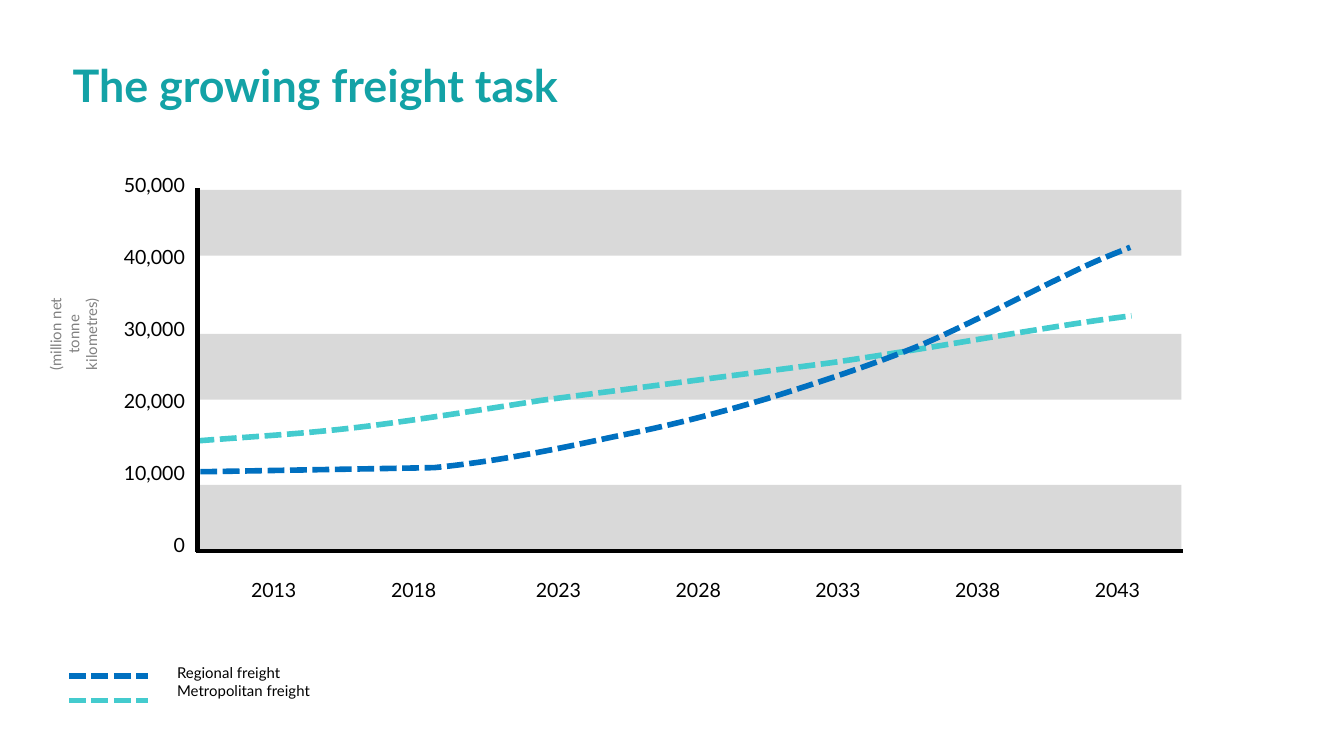
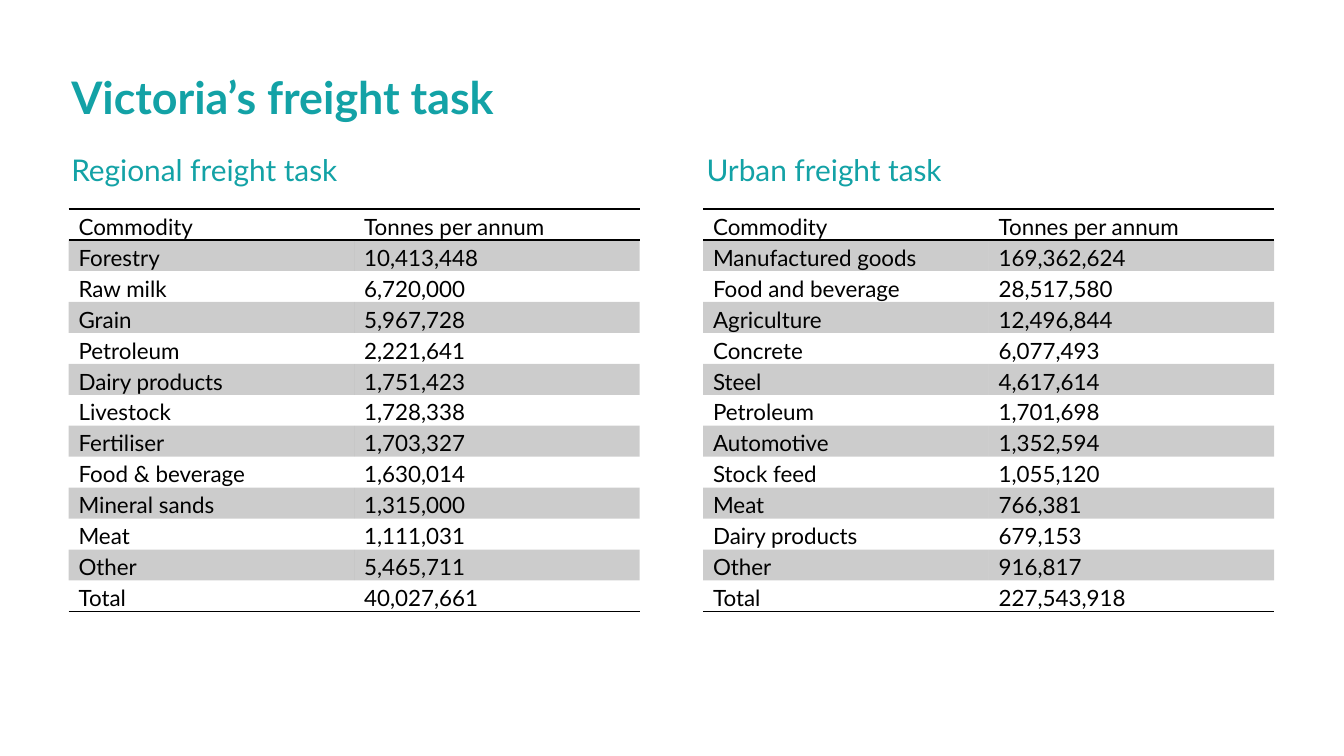
from dataclasses import dataclass

from lxml import etree
from pptx import Presentation
from pptx.dml.color import RGBColor
from pptx.enum import dml, shapes, text
from pptx.oxml import ns
from pptx import util as u


@dataclass(frozen=True)
class Theme:
    font: str = "Lato"
    teal: str = "13A2A6"
    aqua: str = "44CBCE"
    blue: str = "0070C0"
    black: str = "000000"
    grey: str = "808080"
    band: str = "D9D9D9"
    title_size: float = 24
    heading_size: float = 16
    table_size: float = 12
    axis_size: float = 10.5
    small_size: float = 8
    series_width: float = 3
    axis_width: float = 2.25
    table_style: str = "{2D5ABB26-0587-4C30-8999-92F81FD0307C}"


THEME = Theme()

REGIONAL_CURVE = [
    [(107.3, 252.7)],
    [(112.3, 252.7)],
    [(232.6, 250.6)],
    [(268.6, 247), (298.8, 240.5), (329, 234)],
    [(358.6, 228.2), (383, 221.8), (410.4, 213.8)],
    [(437.8, 205.2), (466.6, 195.8), (493.2, 185)],
    [(519.8, 173.5), (550.8, 157), (569.5, 148.3)],
    [(588.2, 139), (596.9, 136.1), (605.5, 132.5)],
]
METROPOLITAN_CURVE = [
    [(105.8, 236.2)],
    [(133.9, 234), (161.3, 232.6), (191.5, 229)],
    [(222.5, 225.4), (289.4, 214.6), (289.4, 214.6)],
    [(445, 194.4)],
    [(489.6, 187.9), (529.9, 180.7), (557.3, 176.4)],
    [(583.9, 172.1), (595.4, 170.6), (606.2, 169.2)],
]
YEAR_STOPS = (75, 152.6, 227.5, 302.3, 377.2, 452)
TABLE_HEADER = ("Commodity", "Tonnes per annum")
REGIONAL_ROWS = [
    ("Forestry", "10,413,448"),
    ("Raw milk", "6,720,000"),
    ("Grain", "5,967,728"),
    ("Petroleum", "2,221,641"),
    ("Dairy products", "1,751,423"),
    ("Livestock", "1,728,338"),
    ("Fertiliser", "1,703,327"),
    ("Food & beverage", "1,630,014"),
    ("Mineral sands", "1,315,000"),
    ("Meat", "1,111,031"),
    ("Other", "5,465,711"),
    ("Total", "40,027,661"),
]
URBAN_ROWS = [
    ("Manufactured goods", "169,362,624"),
    ("Food and beverage", "28,517,580"),
    ("Agriculture", "12,496,844"),
    ("Concrete", "6,077,493"),
    ("Steel", "4,617,614"),
    ("Petroleum", "1,701,698"),
    ("Automotive", "1,352,594"),
    ("Stock feed", "1,055,120"),
    ("Meat", "766,381"),
    ("Dairy products", "679,153"),
    ("Other", "916,817"),
    ("Total", "227,543,918"),
]


def points(*values):
    return [u.Pt(value) for value in values]


def set_formats(target, formats):
    for name, value in formats.items():
        setattr(target, name, value)


def write_text(frame, lines, size, color, bold=False, **paragraph_formats):
    frame.text = "\n".join(lines)
    for paragraph in frame.paragraphs:
        set_formats(paragraph, {"alignment": text.PP_ALIGN.LEFT,
                                "space_before": u.Pt(0), **paragraph_formats})
        for run in paragraph.runs:
            set_formats(run.font, {"name": THEME.font, "size": u.Pt(size), "bold": bold})
            run.font.color.rgb = RGBColor.from_string(color)


def fill_placeholder(placeholder, box, words, size, bold=False):
    set_formats(placeholder, dict(zip(("left", "top", "width", "height"), points(*box))))
    set_formats(placeholder.text_frame, {"vertical_anchor": text.MSO_ANCHOR.TOP,
                                         "word_wrap": True,
                                         "auto_size": text.MSO_AUTO_SIZE.SHAPE_TO_FIT_TEXT})
    write_text(placeholder.text_frame, [words], size, THEME.teal, bold)


def add_title(slide, box, words):
    fill_placeholder(slide.shapes.title, box, words, THEME.title_size, True)


def add_text(slide, box, lines, size, color=THEME.black, frame_formats=None, **paragraph_formats):
    shape = slide.shapes.add_textbox(*points(*box))
    set_formats(shape.text_frame, {"word_wrap": True,
                                   "auto_size": text.MSO_AUTO_SIZE.SHAPE_TO_FIT_TEXT,
                                   **(frame_formats or {})})
    write_text(shape.text_frame, lines, size, color, **paragraph_formats)
    return shape


def add_tab_stops(paragraph, stops):
    tab_list = etree.SubElement(paragraph._p.get_or_add_pPr(), ns.qn("a:tabLst"))
    for stop in stops:
        etree.SubElement(tab_list, ns.qn("a:tab"), pos=str(u.Pt(stop)), algn="l")


def add_band(slide, top):
    band = slide.shapes.add_shape(shapes.MSO_SHAPE.RECTANGLE, *points(106.6, top, 526.3, 35.3))
    band.shadow.inherit = False
    band.fill.solid()
    band.fill.fore_color.rgb = RGBColor.from_string(THEME.band)
    band.line.fill.background()


def style_line(line, color, width, dashed):
    line.color.rgb = RGBColor.from_string(color)
    line.width = u.Pt(width)
    if dashed:
        line.dash_style = dml.MSO_LINE.SQUARE_DOT


def add_line(slide, ends, color, width, dashed=False):
    line = slide.shapes.add_connector(shapes.MSO_CONNECTOR.STRAIGHT, *points(*ends))
    style_line(line.line, color, width, dashed)
    etree.SubElement(line._element.spPr, ns.qn("a:effectLst"))


def round_segments(curve, segments):
    straight_lines = iter(list(curve._element.iter(ns.qn("a:lnTo"))))
    for segment in segments:
        pieces = [next(straight_lines) for _ in segment]
        if len(pieces) == 3:
            bezier = etree.Element(ns.qn("a:cubicBezTo"))
            pieces[0].addprevious(bezier)
            for piece in pieces:
                bezier.append(piece[0])
                piece.getparent().remove(piece)


def add_curve(slide, segments, color):
    vertices = [points(*point) for segment in segments for point in segment]
    builder = slide.shapes.build_freeform(*vertices[0], scale=1.0)
    builder.add_line_segments(vertices[1:], close=False)
    curve = builder.convert_to_shape()
    round_segments(curve, segments[1:])
    curve.shadow.inherit = False
    curve.fill.background()
    style_line(curve.line, color, THEME.series_width, True)


def add_borders(cell, sides):
    properties = cell._tc.get_or_add_tcPr()
    for index, side in enumerate(sides):
        border = etree.Element(ns.qn(f"a:ln{side}"), w=str(u.Pt(1)))
        fill = etree.SubElement(border, ns.qn("a:solidFill"))
        etree.SubElement(fill, ns.qn("a:srgbClr"), val=THEME.black)
        properties.insert(index, border)


def shade_cell(cell, shaded):
    if not shaded:
        cell.fill.background()
        return
    cell.fill.solid()
    cell.fill.fore_color.rgb = RGBColor.from_string(THEME.black)
    color = cell._tc.tcPr.find(f".//{ns.qn('a:srgbClr')}")
    etree.SubElement(color, ns.qn("a:alpha"), val="20000")


def add_freight_table(slide, left, body_rows):
    rows = [TABLE_HEADER, *body_rows]
    row_height = 16.56
    frame = slide.shapes.add_table(len(rows), 2, *points(left, 112, 306, row_height * len(rows)))
    table = frame.table
    set_formats(table, {"first_row": False, "horz_banding": False})
    table._tbl.tblPr.find(ns.qn("a:tableStyleId")).text = THEME.table_style
    borders = {0: "TB", len(rows) - 1: "B"}
    for row_index, values in enumerate(rows):
        table.rows[row_index].height = u.Pt(row_height)
        for column_index, value in enumerate(values):
            cell = table.cell(row_index, column_index)
            set_formats(cell, dict(zip(("margin_left", "margin_top", "margin_right",
                                        "margin_bottom"), points(5.4, 0, 5.4, 0))))
            write_text(cell.text_frame, [value], THEME.table_size, THEME.black, line_spacing=1.15)
            shade_cell(cell, row_index % 2 == 1)
            add_borders(cell, borders.get(row_index, ""))


def build_growth_slide(presentation):
    slide = presentation.slides.add_slide(presentation.slide_layouts.get_by_name("Title Only"))
    add_title(slide, (31.7, 27.4, 459.4, 36), "The growing freight task")
    for top in (101.7, 178.8, 259.7):
        add_band(slide, top)
    add_curve(slide, METROPOLITAN_CURVE, THEME.aqua)
    add_curve(slide, REGIONAL_CURVE, THEME.blue)
    for ends in ((105.1, 295.2, 633.6, 295.2), (105.8, 100.8, 105.8, 295.9)):
        add_line(slide, ends, THEME.black, THEME.axis_width)

    years = [str(year) for year in range(2013, 2044, 5)]
    year_labels = add_text(slide, (127.4, 306, 601.2, 20.9), ["\t".join(years)], THEME.axis_size)
    add_tab_stops(year_labels.text_frame.paragraphs[0], YEAR_STOPS)
    add_text(slide, (54.7, 89.3, 51.4, 214.6),
             [f"{value:,}" for value in range(50000, -1, -10000)], THEME.axis_size,
             alignment=text.PP_ALIGN.RIGHT, space_before=u.Pt(26))
    unit_label = add_text(slide, (7.2, 172.1, 64.1, 13.7), ["(million net tonne kilometres)"],
                          THEME.small_size, THEME.grey,
                          {"word_wrap": False, "vertical_anchor": text.MSO_ANCHOR.MIDDLE,
                           "margin_top": u.Pt(2), "margin_bottom": u.Pt(2)},
                          alignment=text.PP_ALIGN.CENTER)
    unit_label.rotation = 270

    for y, color in ((362.3, THEME.blue), (375.2, THEME.aqua)):
        add_line(slide, (37, y, 79.2, y), color, THEME.series_width, True)
    add_text(slide, (87.8, 352.1, 118.8, 26.6), ["Regional freight", "Metropolitan freight"],
             THEME.small_size)


def build_commodity_slide(presentation):
    slide = presentation.slides.add_slide(presentation.slide_layouts.get_by_name("Comparison"))
    add_title(slide, (31, 33.8, 540.7, 36), "Victoria’s freight task")
    headings = [shape for shape in slide.placeholders
                if shape.placeholder_format.type == shapes.PP_PLACEHOLDER.BODY]
    columns = (
        ("Regional freight task", (31, 77.8, 219.6, 26.6), 36.7, REGIONAL_ROWS),
        ("Urban freight task", (371.3, 77.8, 175.7, 26.6), 376.6, URBAN_ROWS),
    )
    for placeholder, (heading, box, table_left, rows) in zip(headings, columns):
        fill_placeholder(placeholder, box, heading, THEME.heading_size)
        add_freight_table(slide, table_left, rows)
    for placeholder in list(slide.placeholders):
        if not placeholder.text_frame.text:
            placeholder.element.getparent().remove(placeholder.element)


def main():
    presentation = Presentation()
    set_formats(presentation, {"slide_width": u.Pt(720), "slide_height": u.Pt(405)})
    build_growth_slide(presentation)
    build_commodity_slide(presentation)
    presentation.save("out.pptx")


if __name__ == "__main__":
    main()
